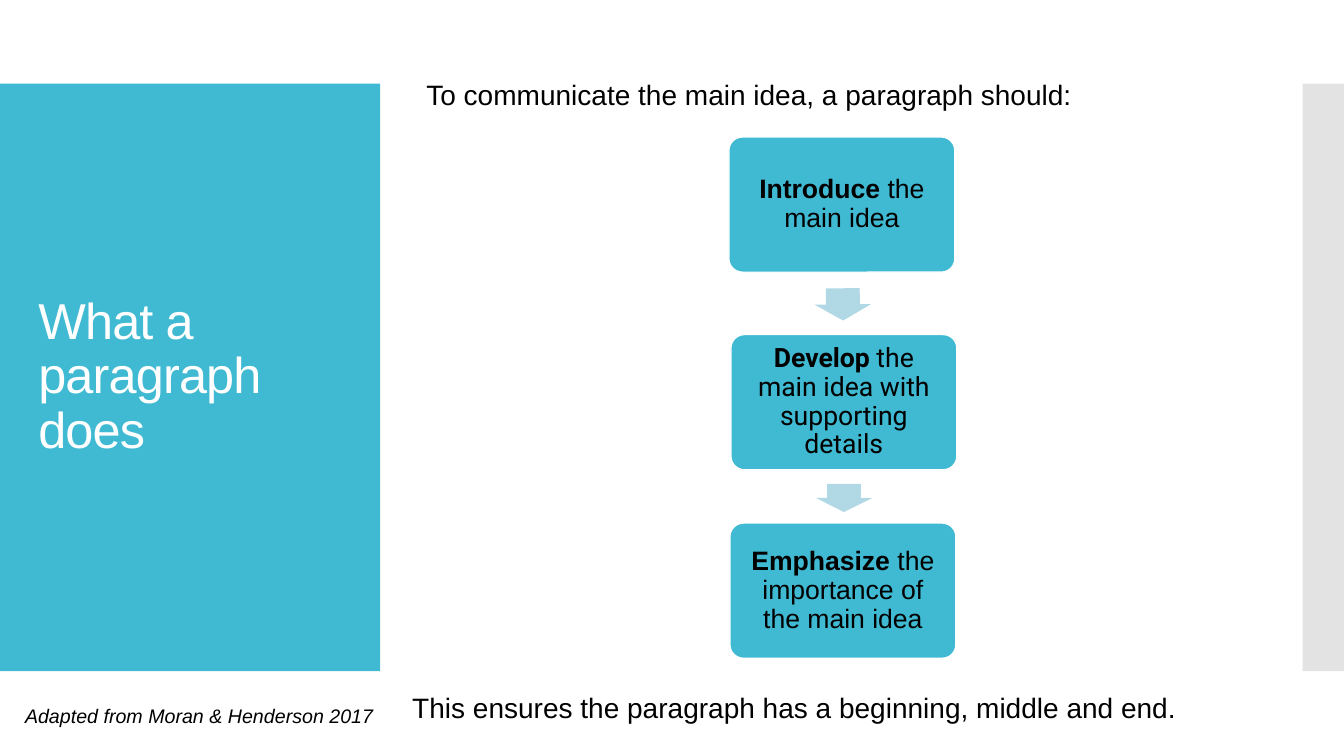
from dataclasses import dataclass

from lxml import etree
from pptx import Presentation
from pptx.dml.color import RGBColor
from pptx.enum import shapes, text
from pptx.oxml import ns
from pptx import util as u


@dataclass(frozen=True)
class Theme:
    font: str = "Arial"
    teal: str = "40BAD2"
    pale: str = "B0D9E5"
    grey: str = "C8C8C8"
    white: str = "FFFFFF"
    black: str = "000000"
    title: float = 36
    body: float = 20
    step: float = 19
    credit: float = 14


@dataclass(frozen=True)
class Box:
    left: float
    top: float
    width: float
    height: float

    def emu(self) -> tuple:
        return tuple(u.Inches(v) for v in (self.left, self.top, self.width, self.height))


@dataclass(frozen=True)
class Step:
    left: float
    top: float
    verb: str
    rest: str
    font: str


@dataclass(frozen=True)
class Arrow:
    box: Box
    angle: float


@dataclass(frozen=True)
class Note:
    box: Box
    words: str
    size: float
    italic: bool = False


T = Theme()
PANEL_TOP, PANEL_HEIGHT = 0.83, 5.83
STEP_WIDTH, STEP_HEIGHT = 2.24, 1.34

STEPS = [
    Step(7.23, 1.36, "Introduce", " the main idea", T.font),
    Step(7.25, 3.32, "Develop", " the main idea with supporting details", "Roboto"),
    Step(7.24, 5.19, "Emphasize", " the importance of the main idea", T.font),
]
ARROWS = [
    Arrow(Box(8.2, 2.74, 0.32, 0.56), 89.3),
    Arrow(Box(8.23, 4.66, 0.28, 0.56), 90.3),
]
NOTES = [
    Note(Box(4.13, 0.72, 8.1, 0.43), "To communicate the main idea, a paragraph should:", T.body),
    Note(Box(3.99, 6.8, 8.1, 0.43),
         "This ensures the paragraph has a beginning, middle and end.", T.body),
    Note(Box(0.15, 6.93, 3.84, 0.34), "Adapted from Moran & Henderson 2017", T.credit, True),
]


def add_text(p, words: str, *, size: float, font: str = T.font, color: str = T.black,
             bold: bool = False, italic: bool = False, spacing: float = 0) -> None:
    r = p.add_run()
    r.text = words
    r.font.name = font
    r.font.size = u.Pt(size)
    r.font.color.rgb = RGBColor.from_string(color)
    r.font.bold = bold
    r.font.italic = italic
    if spacing:
        r.font._element.set("spc", str(round(spacing * 100)))


def add_block(s, kind, box: Box, fill: str, alpha: int = 100):
    sp = s.shapes.add_shape(kind, *box.emu())
    sp.shadow.inherit = False
    sp.fill.solid()
    sp.fill.fore_color.rgb = RGBColor.from_string(fill)
    sp.line.fill.background()
    if alpha < 100:
        clr = sp.fill._xPr.find(ns.qn("a:solidFill"))[0]
        etree.SubElement(clr, ns.qn("a:alpha")).set("val", str(alpha * 1000))
    return sp


def add_title(s, box: Box, words: str) -> None:
    sp = s.shapes.title
    sp.left, sp.top, sp.width, sp.height = box.emu()
    tf = sp.text_frame
    tf.word_wrap = True
    tf.auto_size = text.MSO_AUTO_SIZE.NONE
    tf.vertical_anchor = text.MSO_ANCHOR.MIDDLE
    p = tf.paragraphs[0]
    p.alignment = text.PP_ALIGN.LEFT
    p.line_spacing = 0.9
    add_text(p, words, size=T.title, color=T.white, spacing=-0.6)
    sp.element.getparent().append(sp.element)


def add_step(s, step: Step) -> None:
    box = Box(step.left, step.top, STEP_WIDTH, STEP_HEIGHT)
    sp = add_block(s, shapes.MSO_SHAPE.ROUNDED_RECTANGLE, box, T.teal)
    sp.adjustments[0] = 0.1
    sp.line.color.rgb = RGBColor.from_string(T.white)
    sp.line.width = u.Pt(0.85)
    tf = sp.text_frame
    tf.word_wrap = True
    tf.vertical_anchor = text.MSO_ANCHOR.MIDDLE
    tf.margin_left = tf.margin_right = tf.margin_top = tf.margin_bottom = u.Inches(0.11)
    p = tf.paragraphs[0]
    p.alignment = text.PP_ALIGN.CENTER
    p.line_spacing = 0.9
    add_text(p, step.verb, size=T.step, font=step.font, bold=True)
    add_text(p, step.rest, size=T.step, font=step.font)


def add_arrow(s, arrow: Arrow) -> None:
    sp = add_block(s, shapes.MSO_SHAPE.RIGHT_ARROW, arrow.box, T.pale)
    sp.adjustments[0], sp.adjustments[1] = 0.6, 0.5
    sp.rotation = arrow.angle


def add_note(s, note: Note) -> None:
    tf = s.shapes.add_textbox(*note.box.emu()).text_frame
    tf.word_wrap = True
    add_text(tf.paragraphs[0], note.words, size=note.size, italic=note.italic)


def main() -> None:
    prs = Presentation()
    prs.slide_width, prs.slide_height = u.Inches(13.33), u.Inches(7.5)
    s = prs.slides.add_slide(prs.slide_layouts[5])
    rect = shapes.MSO_SHAPE.RECTANGLE
    add_block(s, rect, Box(0, PANEL_TOP, 3.77, PANEL_HEIGHT), T.teal)
    add_block(s, rect, Box(12.92, PANEL_TOP, 0.41, PANEL_HEIGHT), T.grey, alpha=50)
    add_title(s, Box(0.28, 1.23, 3.22, 5.03), "What a paragraph does")
    for step in STEPS:
        add_step(s, step)
    for arrow in ARROWS:
        add_arrow(s, arrow)
    for note in NOTES:
        add_note(s, note)
    prs.save("out.pptx")


if __name__ == "__main__":
    main()
